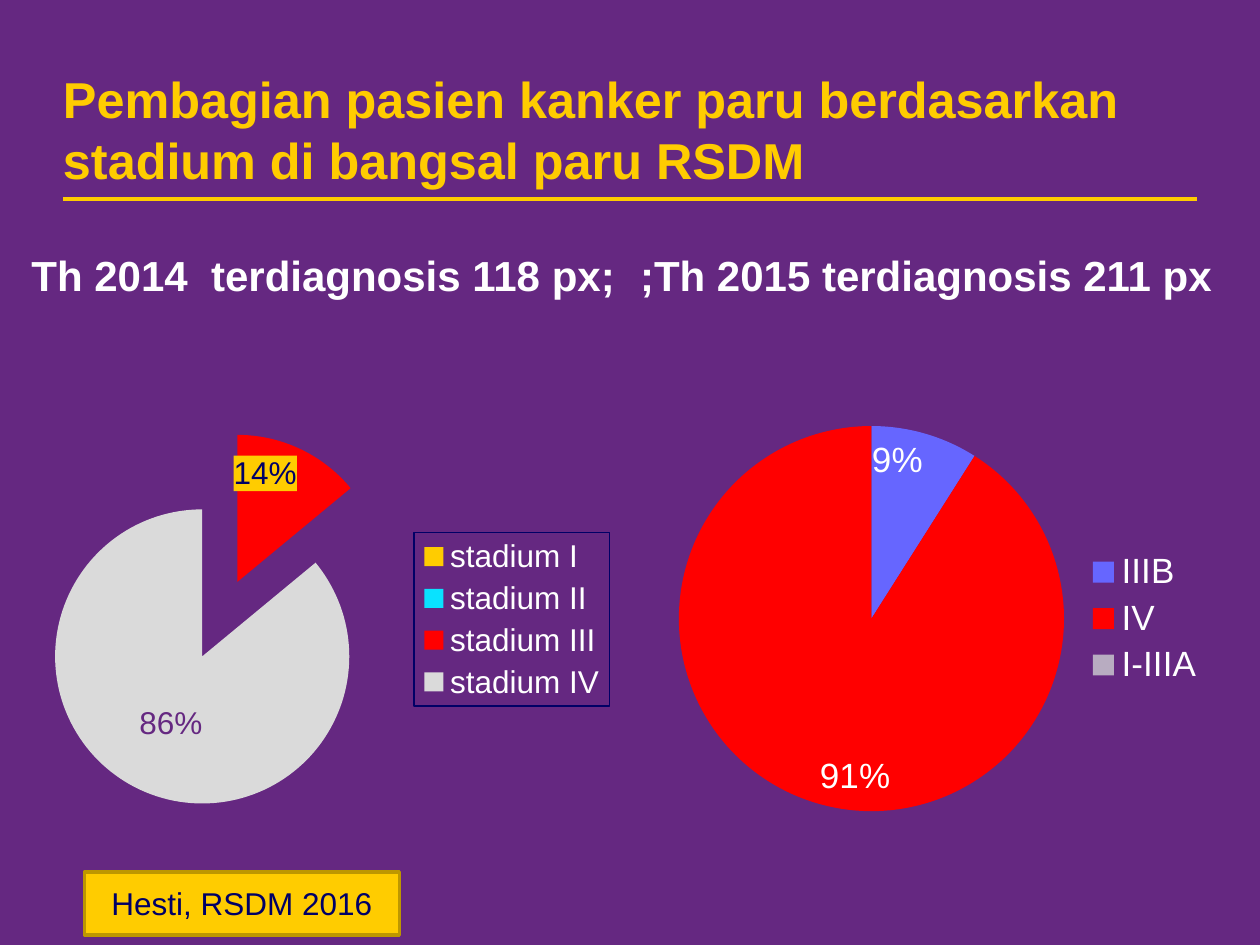
from dataclasses import dataclass

from lxml.etree import SubElement
from pptx import Presentation
from pptx.chart.data import CategoryChartData
from pptx.dml.color import RGBColor
from pptx.enum.chart import XL_CHART_TYPE, XL_LABEL_POSITION, XL_LEGEND_POSITION
from pptx.enum.shapes import MSO_CONNECTOR, MSO_SHAPE
from pptx.enum.text import MSO_ANCHOR, PP_ALIGN
from pptx.oxml import parse_xml
from pptx.oxml.ns import nsdecls, qn
from pptx.util import Inches, Pt


@dataclass(frozen=True)
class Theme:
    font: str = "Arial"
    purple: str = "652881"
    gold: str = "FFCC00"
    dark_gold: str = "BD9700"
    white: str = "FFFFFF"
    navy: str = "000066"
    cyan: str = "09E2FF"
    red: str = "FF0000"
    grey: str = "DADADA"
    blue: str = "6666FF"
    mauve: str = "B8ACC1"
    title_size: float = 28.8
    heading_size: float = 24
    large_size: float = 20
    normal_size: float = 18


def rgb(color):
    return RGBColor.from_string(color)


def solid_fill(color):
    return f'<a:solidFill><a:srgbClr val="{color}"/></a:solidFill>'


class SlideBuilder:
    def __init__(self, slide, theme):
        self.slide = slide
        self.theme = theme
        slide.background.fill.solid()
        slide.background.fill.fore_color.rgb = rgb(theme.purple)

    def style_font(self, font, size, color, bold=False):
        font.name = self.theme.font
        font.size = Pt(size)
        font.bold = bold
        font.color.rgb = rgb(color)

    def text(self, content, box, size, color, insets=(0, 0, 0, 0), space_after=0):
        """Add bold text that sits on the bottom of its box."""
        frame = self.slide.shapes.add_textbox(*map(Inches, box)).text_frame
        frame.word_wrap = True
        frame.vertical_anchor = MSO_ANCHOR.BOTTOM
        (frame.margin_left, frame.margin_top,
         frame.margin_right, frame.margin_bottom) = map(Inches, insets)
        frame.text = content
        paragraph = frame.paragraphs[0]
        paragraph.space_after = Pt(space_after)
        self.style_font(paragraph.runs[0].font, size, color, bold=True)

    def rule(self, left, right, top):
        line = self.slide.shapes.add_connector(
            MSO_CONNECTOR.STRAIGHT, Inches(left), Inches(top), Inches(right), Inches(top))
        line.line.color.rgb = rgb(self.theme.gold)
        line.line.width = Pt(2.25)
        SubElement(line._element.spPr, qn("a:effectLst"))

    def source_box(self, content, box):
        shape = self.slide.shapes.add_shape(MSO_SHAPE.RECTANGLE, *map(Inches, box))
        shape.shadow.inherit = False
        shape.fill.solid()
        shape.fill.fore_color.rgb = rgb(self.theme.gold)
        shape.line.color.rgb = rgb(self.theme.dark_gold)
        shape.line.width = Pt(2)
        frame = shape.text_frame
        frame.text = content
        frame.vertical_anchor = MSO_ANCHOR.MIDDLE
        frame.paragraphs[0].alignment = PP_ALIGN.CENTER
        self.style_font(frame.paragraphs[0].runs[0].font,
                        self.theme.normal_size, self.theme.navy)

    def pie(self, box, shares, colors, size, number_format):
        data = CategoryChartData(number_format=number_format)
        data.categories = list(shares)
        data.add_series("Series 1", list(shares.values()))
        chart = self.slide.shapes.add_chart(
            XL_CHART_TYPE.PIE, *map(Inches, box), data).chart
        chart.has_title = False
        self.style_font(chart.font, self.theme.normal_size, self.theme.white)
        chart.has_legend = True
        chart.legend.position = XL_LEGEND_POSITION.RIGHT
        chart.legend.include_in_layout = False
        self.style_font(chart.legend.font, size, self.theme.white)
        chart.plots[0].vary_by_categories = True
        for index, color in enumerate(colors):
            fill = chart.plots[0].series[0].points[index].format.fill
            fill.solid()
            fill.fore_color.rgb = rgb(color)
        return chart

    def label_slice(self, series, index, color, position, fill=None):
        label = series.points[index].data_label
        self.style_font(label.font, self.theme.normal_size, color)
        label.position = position
        if fill:
            text_properties = label._get_or_add_dLbl().find(qn("c:txPr"))
            text_properties.addprevious(parse_xml(
                f'<c:spPr {nsdecls("c", "a")}>{solid_fill(fill)}</c:spPr>'))

    def label_percentages(self, series, size):
        labels = series.data_labels
        labels.show_percentage = True
        labels.show_value = False
        labels.number_format = "0%;;"
        labels.number_format_is_linked = False
        labels.position = XL_LABEL_POSITION.INSIDE_END
        self.style_font(labels.font, size, self.theme.white)

    def explode(self, series, percent):
        first_point = series._element.find(qn("c:dPt"))
        first_point.addprevious(parse_xml(
            f'<c:explosion {nsdecls("c")} val="{percent}"/>'))

    def place_plot(self, chart, x, y, width, height):
        """Fix the inner plot area, in fractions of the chart."""
        plot_area = chart._chartSpace.chart.plotArea
        for old_layout in plot_area.findall(qn("c:layout")):
            plot_area.remove(old_layout)
        sizes = "".join(f'<c:{tag} val="{value}"/>' for tag, value in
                        zip("xywh", (x, y, width, height)))
        plot_area.insert(0, parse_xml(
            f'<c:layout {nsdecls("c")}><c:manualLayout><c:layoutTarget val="inner"/>'
            f'<c:xMode val="edge"/><c:yMode val="edge"/>{sizes}'
            f'</c:manualLayout></c:layout>'))

    def frame_legend(self, chart, color):
        chart.legend._element.find(qn("c:txPr")).addprevious(parse_xml(
            f'<c:spPr {nsdecls("c", "a")}><a:ln w="{Pt(0.75)}">'
            f'{solid_fill(color)}</a:ln></c:spPr>'))


def main():
    theme = Theme()
    presentation = Presentation()
    presentation.slide_width, presentation.slide_height = Inches(10), Inches(7.5)
    slide = presentation.slides.add_slide(presentation.slide_layouts[6])
    builder = SlideBuilder(slide, theme)

    builder.rule(0.5, 9.5, 1.58)
    builder.text("Pembagian pasien kanker paru berdasarkan stadium di bangsal paru RSDM",
                 (0.5, 0.3, 9, 1.25), theme.title_size, theme.gold,
                 insets=(0, 0.05, 0.1, 0.05))
    for heading, left, width in (("Th 2014  terdiagnosis 118 px;", 0.25, 4.67),
                                 (";Th 2015 terdiagnosis 211 px", 5.08, 4.75)):
        builder.text(heading, (left, 1.68, width, 0.7), theme.heading_size,
                     theme.white, space_after=4.8)

    pie_2014 = builder.pie(
        (0.25, 2.75, 4.67, 4.33),
        {"stadium I": 0, "stadium II": 0, "stadium III": 0.14, "stadium IV": 0.86},
        (theme.gold, theme.cyan, theme.red, theme.grey), theme.normal_size, "0%")
    stages_2014 = pie_2014.plots[0].series[0]
    builder.explode(stages_2014, 28)
    builder.place_plot(pie_2014, 0, 0, 0.64, 1)
    builder.frame_legend(pie_2014, theme.navy)
    stages_2014.data_labels.show_value = False
    builder.label_slice(stages_2014, 2, theme.navy,
                        XL_LABEL_POSITION.INSIDE_END, fill=theme.gold)
    builder.label_slice(stages_2014, 3, theme.purple, XL_LABEL_POSITION.CENTER)

    pie_2015 = builder.pie(
        (5.25, 2.75, 4.42, 4.32), {"IIIB": 9, "IV": 91, "I-IIIA": 0},
        (theme.blue, theme.red, theme.mauve), theme.large_size, "General")
    builder.label_percentages(pie_2015.plots[0].series[0], theme.large_size)

    builder.source_box("Hesti, RSDM 2016", (0.67, 6.92, 2.5, 0.5))
    presentation.save("out.pptx")


if __name__ == "__main__":
    main()
